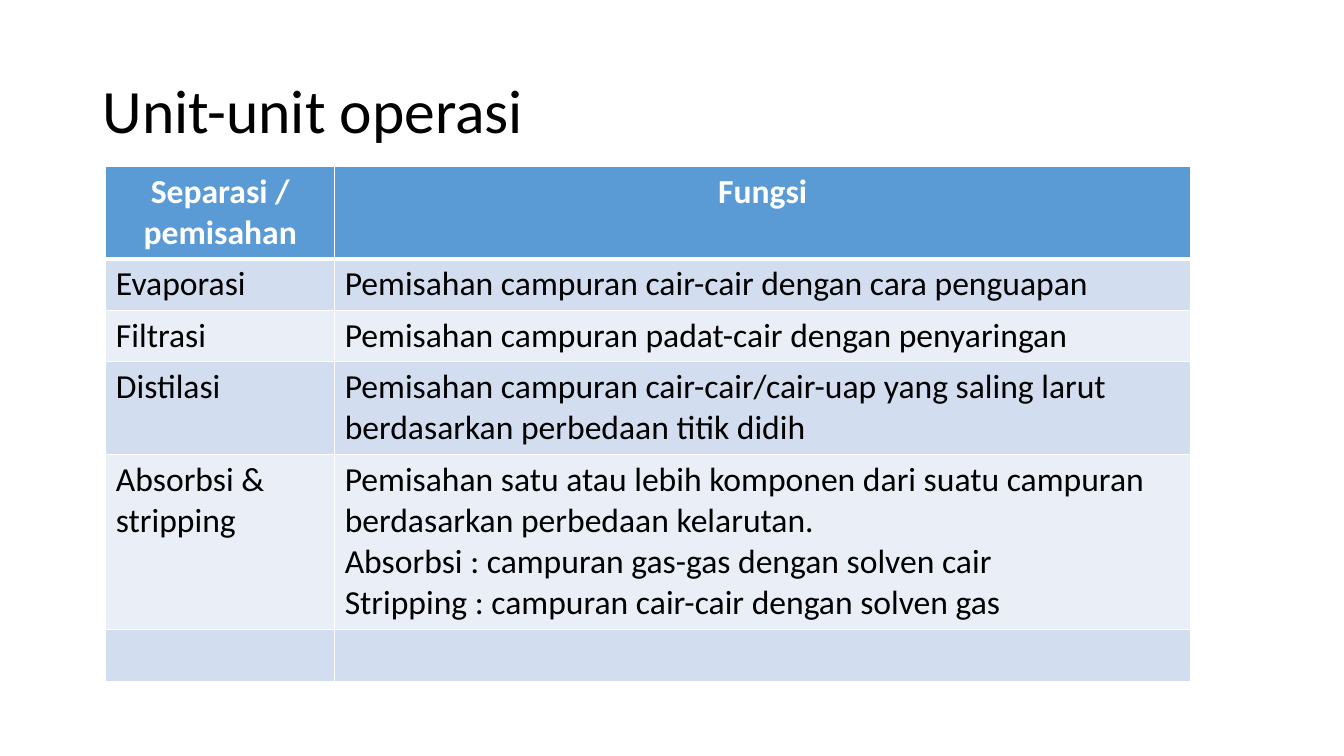
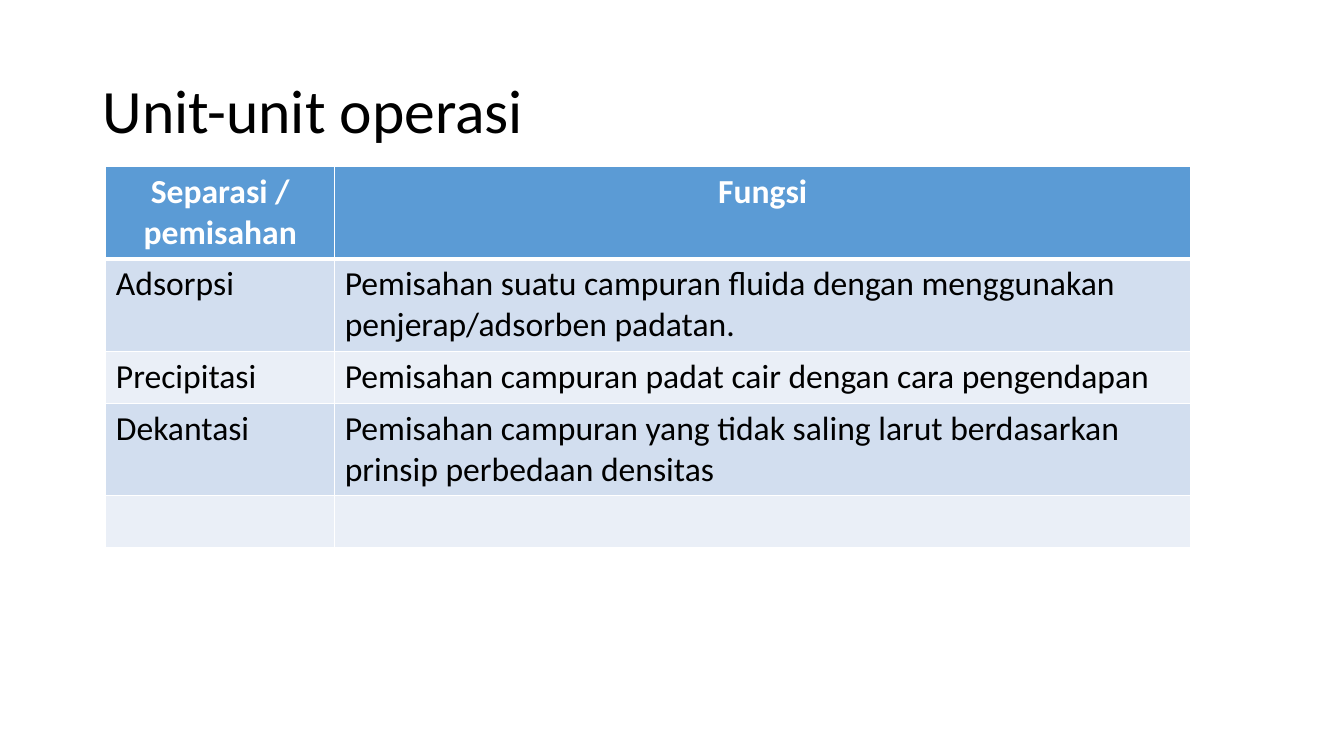
from dataclasses import dataclass

import lxml.etree
import pptx
import pptx.dml.color
import pptx.enum.text
import pptx.oxml.ns
import pptx.presentation
import pptx.slide
import pptx.table
import pptx.text.text
import pptx.util
from pptx.util import Inches


@dataclass(frozen=True)
class Theme:
    font: str = "Calibri"
    title_size: int = 44
    table_size: int = 24
    text: str = "000000"
    header_text: str = "FFFFFF"
    header_fill: str = "5B9BD5"
    band_fills: tuple[str, str] = ("D2DEEF", "EAEFF7")
    border: str = "FFFFFF"
    border_width: int = 1
    header_border_width: int = 3


@dataclass(frozen=True)
class Operation:
    name: str = ""
    function: str = ""
    line_count: int = 1


THEME = Theme()
TITLE = "Unit-unit operasi"
HEADER = Operation("Separasi / pemisahan", "Fungsi", 2)
COLUMN_WIDTHS = (2.27, 8.49)
LINE_HEIGHT = 0.41
CELL_PADDING = 0.1

SLIDES = (
    (
        Operation("Evaporasi", "Pemisahan campuran cair-cair dengan cara penguapan"),
        Operation("Filtrasi", "Pemisahan campuran padat-cair dengan penyaringan"),
        Operation(
            "Distilasi",
            "Pemisahan campuran cair-cair/cair-uap yang saling larut "
            "berdasarkan perbedaan titik didih",
            2,
        ),
        Operation(
            "Absorbsi & stripping",
            "Pemisahan satu atau lebih komponen dari suatu campuran "
            "berdasarkan perbedaan kelarutan.\n"
            "Absorbsi : campuran gas-gas dengan solven cair\n"
            "Stripping : campuran cair-cair dengan solven gas",
            4,
        ),
        Operation(),
    ),
    (
        Operation(
            "Adsorpsi",
            "Pemisahan suatu campuran fluida dengan menggunakan "
            "penjerap/adsorben padatan.",
            2,
        ),
        Operation("Precipitasi", "Pemisahan campuran padat cair dengan cara pengendapan"),
        Operation(
            "Dekantasi",
            "Pemisahan campuran yang tidak saling larut berdasarkan "
            "prinsip perbedaan densitas",
            2,
        ),
        Operation(),
    ),
)


def format_runs(
    paragraph: pptx.text.text._Paragraph, size: int, color: str, bold: bool = False
) -> None:
    for run in paragraph.runs:
        run.font.name = THEME.font
        run.font.size = pptx.util.Pt(size)
        run.font.bold = bold
        run.font.color.rgb = pptx.dml.color.RGBColor.from_string(color)


def add_title(slide: pptx.slide.Slide) -> None:
    shape = slide.shapes.add_textbox(Inches(0.92), Inches(0.4), Inches(11.5), Inches(1.45))
    frame = shape.text_frame
    frame.word_wrap = True
    frame.vertical_anchor = pptx.enum.text.MSO_ANCHOR.MIDDLE
    frame.text = TITLE
    paragraph = frame.paragraphs[0]
    paragraph.line_spacing = 0.9
    format_runs(paragraph, THEME.title_size, THEME.text)


def set_borders(cell: pptx.table._Cell, top: int, bottom: int) -> None:
    properties = cell._tc.get_or_add_tcPr()
    side = THEME.border_width
    qn = pptx.oxml.ns.qn
    for tag, width in (("a:lnL", side), ("a:lnR", side), ("a:lnT", top), ("a:lnB", bottom)):
        line = lxml.etree.SubElement(properties, qn(tag), w=str(pptx.util.Pt(width)))
        fill = lxml.etree.SubElement(line, qn("a:solidFill"))
        lxml.etree.SubElement(fill, qn("a:srgbClr"), val=THEME.border)


def fill_cell(cell: pptx.table._Cell, text: str, row_index: int) -> None:
    is_header = row_index == 0
    thin, thick = THEME.border_width, THEME.header_border_width
    set_borders(cell, thick if row_index == 1 else thin, thick if is_header else thin)
    color = THEME.header_fill if is_header else THEME.band_fills[(row_index - 1) % 2]
    cell.fill.solid()
    cell.fill.fore_color.rgb = pptx.dml.color.RGBColor.from_string(color)
    cell.text_frame.text = text
    for paragraph in cell.text_frame.paragraphs:
        if is_header:
            paragraph.alignment = pptx.enum.text.PP_ALIGN.CENTER
        text_color = THEME.header_text if is_header else THEME.text
        format_runs(paragraph, THEME.table_size, text_color, is_header)


def add_operations_table(slide: pptx.slide.Slide, operations: tuple[Operation, ...]) -> None:
    rows = (HEADER, *operations)
    heights = [CELL_PADDING + LINE_HEIGHT * row.line_count for row in rows]
    frame = slide.shapes.add_table(
        len(rows), len(COLUMN_WIDTHS),
        Inches(1.05), Inches(1.65), Inches(sum(COLUMN_WIDTHS)), Inches(sum(heights)),
    )
    table = frame.table
    table.horz_banding = False
    for column, width in zip(table.columns, COLUMN_WIDTHS):
        column.width = Inches(width)
    for row_index, (row, height) in enumerate(zip(rows, heights)):
        table.rows[row_index].height = Inches(height)
        for column_index, text in enumerate((row.name, row.function)):
            fill_cell(table.cell(row_index, column_index), text, row_index)


def add_operations_slide(
    presentation: pptx.presentation.Presentation, operations: tuple[Operation, ...]
) -> None:
    slide = presentation.slides.add_slide(presentation.slide_layouts[6])
    add_title(slide)
    add_operations_table(slide, operations)


def main() -> None:
    presentation = pptx.Presentation()
    presentation.slide_width = Inches(13.33)
    presentation.slide_height = Inches(7.5)
    for operations in SLIDES:
        add_operations_slide(presentation, operations)
    presentation.save("out.pptx")


if __name__ == "__main__":
    main()
